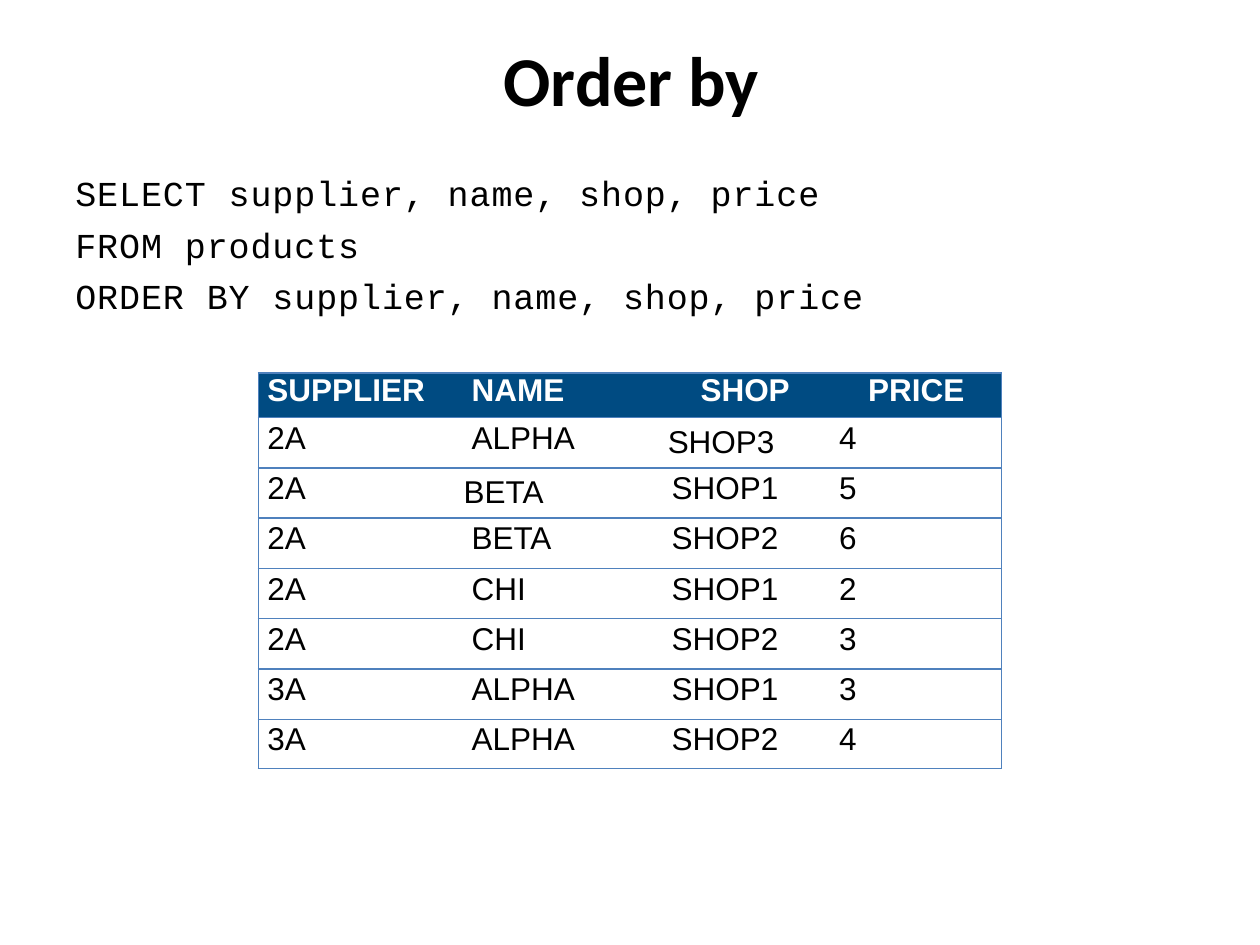
from dataclasses import dataclass

from lxml.etree import SubElement
from pptx import Presentation
from pptx.dml.color import RGBColor as Color
from pptx.enum.text import MSO_ANCHOR as Anchor, PP_ALIGN as Align
from pptx.oxml.ns import qn
from pptx.util import Pt


@dataclass
class Theme:
    ink: str = "000000"
    paper: str = "FFFFFF"
    header: str = "004B82"
    border: str = "4F81BD"
    title_size: float = 40
    code_size: float = 20
    table_size: float = 18


theme = Theme()


def style_span(span, font, size, color, bold=False):
    span.font.name = font
    span.font.size = Pt(size)
    span.font.bold = bold
    span.font.color.rgb = Color.from_string(color)


def add_border(cell, side):
    line = SubElement(cell._tc.get_or_add_tcPr(), qn(f"a:ln{side}"), w=str(Pt(1)))
    fill = SubElement(line, qn("a:solidFill"))
    SubElement(fill, qn("a:srgbClr"), val=theme.border)


deck = Presentation()
deck.slide_width, deck.slide_height = Pt(720), Pt(540)
page = deck.slides.add_slide(deck.slide_layouts[5])

title = page.shapes.title
title.left, title.top, title.width, title.height = Pt(36.72), Pt(9.36), Pt(648), Pt(71.28)
title.text_frame.text = "Order by"
title.text_frame.vertical_anchor = Anchor.MIDDLE
title_para = title.text_frame.paragraphs[0]
title_para.alignment = Align.CENTER
style_span(title_para.runs[0], "Calibri", theme.title_size, theme.ink, True)

query = page.shapes.add_textbox(Pt(36), Pt(94.32), Pt(648), Pt(90.72))
query.text_frame.word_wrap = True
query.text_frame.text = """SELECT supplier, name, shop, price
FROM products
ORDER BY supplier, name, shop, price"""
for para in query.text_frame.paragraphs:
    para.space_before = Pt(5.6)
    span = para.runs[0]
    style_span(span, "Courier New", theme.code_size, theme.ink)
    span.font._element.set("spc", "50")

rows = [
    ("SUPPLIER", "NAME", "SHOP", "PRICE"),
    ("2A", "ALPHA", "SHOP3", "4"),
    ("2A", "BETA", "SHOP1", "5"),
    ("2A", "BETA", "SHOP2", "6"),
    ("2A", "CHI", "SHOP1", "2"),
    ("2A", "CHI", "SHOP2", "3"),
    ("3A", "ALPHA", "SHOP1", "3"),
    ("3A", "ALPHA", "SHOP2", "4"),
]
column_widths = [116.64, 116.64, 95.76, 95.76]
row_heights = [25.5] + [28.75] * 6 + [28]
header_indents = [4.5, 4.5, 18.75, 18.75]
body_indents = [4.5, 4.5, 2.25, 2.25]
unindented_cells = {(1, 2), (2, 1)}

frame = page.shapes.add_table(
    len(rows), len(column_widths), Pt(147.6), Pt(213.12), Pt(sum(column_widths)), Pt(sum(row_heights))
)
products = frame.table
products.horz_banding = False
products._tbl.tblPr.find(qn("a:tableStyleId")).text = "{2D5ABB26-0587-4C30-8999-92F81FD0307C}"
for column, width in zip(products.columns, column_widths):
    column.width = Pt(width)
for row, height in zip(products.rows, row_heights):
    row.height = Pt(height)

for r, values in enumerate(rows):
    is_header = r == 0
    indents = header_indents if is_header else body_indents
    for c, value in enumerate(values):
        cell = products.cell(r, c)
        cell.text = value
        cell.vertical_anchor = Anchor.MIDDLE
        cell.margin_left = cell.margin_right = Pt(0.75)
        cell.margin_top = cell.margin_bottom = 0
        sides = ("L" if c == 0 else "") + ("R" if c == len(values) - 1 else "") + "TB"
        for side in sides:
            add_border(cell, side)
        cell.fill.solid()
        cell.fill.fore_color.rgb = Color.from_string(theme.header if is_header else theme.paper)
        para = cell.text_frame.paragraphs[0]
        if (r, c) not in unindented_cells:
            para.line_spacing = Pt(14.5 if is_header else 15)
            para._p.get_or_add_pPr().set("marL", str(Pt(indents[c])))
        style_span(para.runs[0], "Arial", theme.table_size, theme.paper if is_header else theme.ink, is_header)

deck.save("out.pptx")
